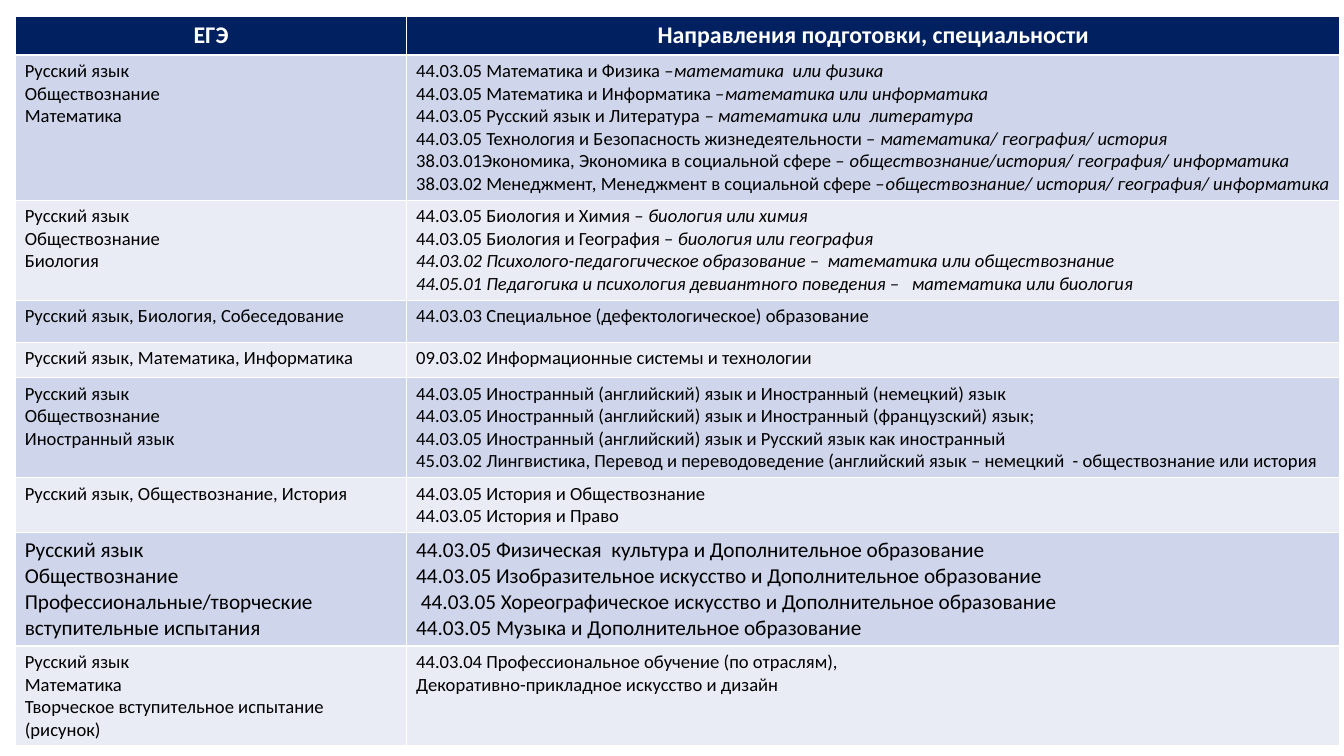
from pptx import Presentation
from pptx.dml.color import RGBColor
from pptx.enum.text import PP_ALIGN
from pptx.util import Pt

NAVY = RGBColor(0x00, 0x20, 0x60)
WHITE = RGBColor(0xFF, 0xFF, 0xFF)
BLACK = RGBColor(0x00, 0x00, 0x00)
BANDS = [RGBColor(0xCF, 0xD5, 0xEA), RGBColor(0xE9, 0xEB, 0xF5)]
FONT = "Calibri"

# Content: each line is (upright part, italic part)
HEADINGS = ["ЕГЭ", "Направления подготовки, специальности"]


def upright(*lines):
    return [(line, "") for line in lines]


# Row height, text size, exams, programmes
ROWS = [
    (96.5, 14, upright("Русский язык", "Обществознание", "Математика"), [
        ("44.03.05 Математика и Физика –", "математика  или физика"),
        ("44.03.05 Математика и Информатика –", "математика или информатика"),
        ("44.03.05 Русский язык и Литература ", "– математика или  литература"),
        ("44.03.05 Технология и Безопасность жизнедеятельности – ",
         "математика/ география/ история"),
        ("38.03.01Экономика, Экономика в социальной сфере – ",
         "обществознание/история/ география/ информатика"),
        ("38.03.02 Менеджмент, Менеджмент в социальной сфере –",
         "обществознание/ история/ география/ информатика"),
    ]),
    (57.6, 14, upright("Русский язык", "Обществознание", "Биология"), [
        ("44.03.05 Биология и Химия – ", "биология или химия"),
        ("44.03.05 Биология и География – ", "биология или география"),
        ("", "44.03.02 Психолого-педагогическое образование –  "
             "математика или обществознание"),
        ("", "44.05.01 Педагогика и психология девиантного поведения –   "
             "математика или биология"),
    ]),
    (31.7, 14, upright("Русский язык, Биология, Собеседование"),
     upright("44.03.03 Специальное (дефектологическое) образование")),
    (26.6, 14, upright("Русский язык, Математика, Информатика"),
     upright("09.03.02 Информационные системы и технологии")),
    (70.6, 14, upright("Русский язык", "Обществознание", "Иностранный язык"), upright(
        "44.03.05 Иностранный (английский) язык и Иностранный (немецкий) язык",
        "44.03.05 Иностранный (английский) язык и Иностранный (французский) язык;",
        "44.03.05 Иностранный (английский) язык и Русский язык как иностранный",
        "45.03.02 Лингвистика, Перевод и переводоведение "
        "(английский язык – немецкий  - обществознание или история")),
    (40.3, 14, upright("Русский язык, Обществознание, История"),
     upright("44.03.05 История и Обществознание", "44.03.05 История и Право")),
    (65.5, 16, upright("Русский язык", "Обществознание",
                       "Профессиональные/творческие вступительные испытания"), upright(
        "44.03.05 Физическая  культура и Дополнительное образование",
        "44.03.05 Изобразительное искусство и Дополнительное образование",
        " 44.03.05 Хореографическое искусство и Дополнительное образование",
        "44.03.05 Музыка и Дополнительное образование")),
    (57.6, 14, upright("Русский язык", "Математика",
                       "Творческое вступительное испытание (рисунок)"), upright(
        "44.03.04 Профессиональное обучение (по отраслям), \n"
        "Декоративно-прикладное искусство и дизайн")),
]

# Layout
SLIDE_W, SLIDE_H = 1012.3, 569.5
LEFT, TOP = 11.5, 12.2
COLUMN_WIDTHS = [294.8, 703]
HEADER_HEIGHT = 22.3


def format_run(run, size, color, bold=False, italic=False):
    run.font.name = FONT
    run.font.size = Pt(size)
    run.font.color.rgb = color
    run.font.bold = bold
    run.font.italic = italic


def fill_cell(cell, color):
    cell.fill.solid()
    cell.fill.fore_color.rgb = color


def write_lines(cell, lines, size):
    frame = cell.text_frame
    for index, (plain, italic) in enumerate(lines):
        paragraph = frame.add_paragraph() if index else frame.paragraphs[0]
        paragraph.text = plain
        for run in paragraph.runs:
            format_run(run, size, BLACK)
        if italic:
            remark = paragraph.add_run()
            remark.text = italic
            format_run(remark, size, BLACK, italic=True)


presentation = Presentation()
presentation.slide_width, presentation.slide_height = Pt(SLIDE_W), Pt(SLIDE_H)
slide = presentation.slides.add_slide(presentation.slide_layouts[6])

heights = [HEADER_HEIGHT] + [row[0] for row in ROWS]
programmes_table = slide.shapes.add_table(
    len(heights), len(COLUMN_WIDTHS), Pt(LEFT), Pt(TOP),
    Pt(sum(COLUMN_WIDTHS)), Pt(sum(heights))).table
for column, width in zip(programmes_table.columns, COLUMN_WIDTHS):
    column.width = Pt(width)
for table_row, height in zip(programmes_table.rows, heights):
    table_row.height = Pt(height)

# Header row
for cell, heading in zip(programmes_table.rows[0].cells, HEADINGS):
    fill_cell(cell, NAVY)
    cell.text_frame.text = heading
    paragraph = cell.text_frame.paragraphs[0]
    paragraph.alignment = PP_ALIGN.CENTER
    format_run(paragraph.runs[0], 18, WHITE, bold=True)

# Exam and programme rows
for number, (_, size, exams, programmes) in enumerate(ROWS):
    for cell, lines in zip(programmes_table.rows[number + 1].cells, (exams, programmes)):
        fill_cell(cell, BANDS[number % 2])
        write_lines(cell, lines, size)

presentation.save("out.pptx")
